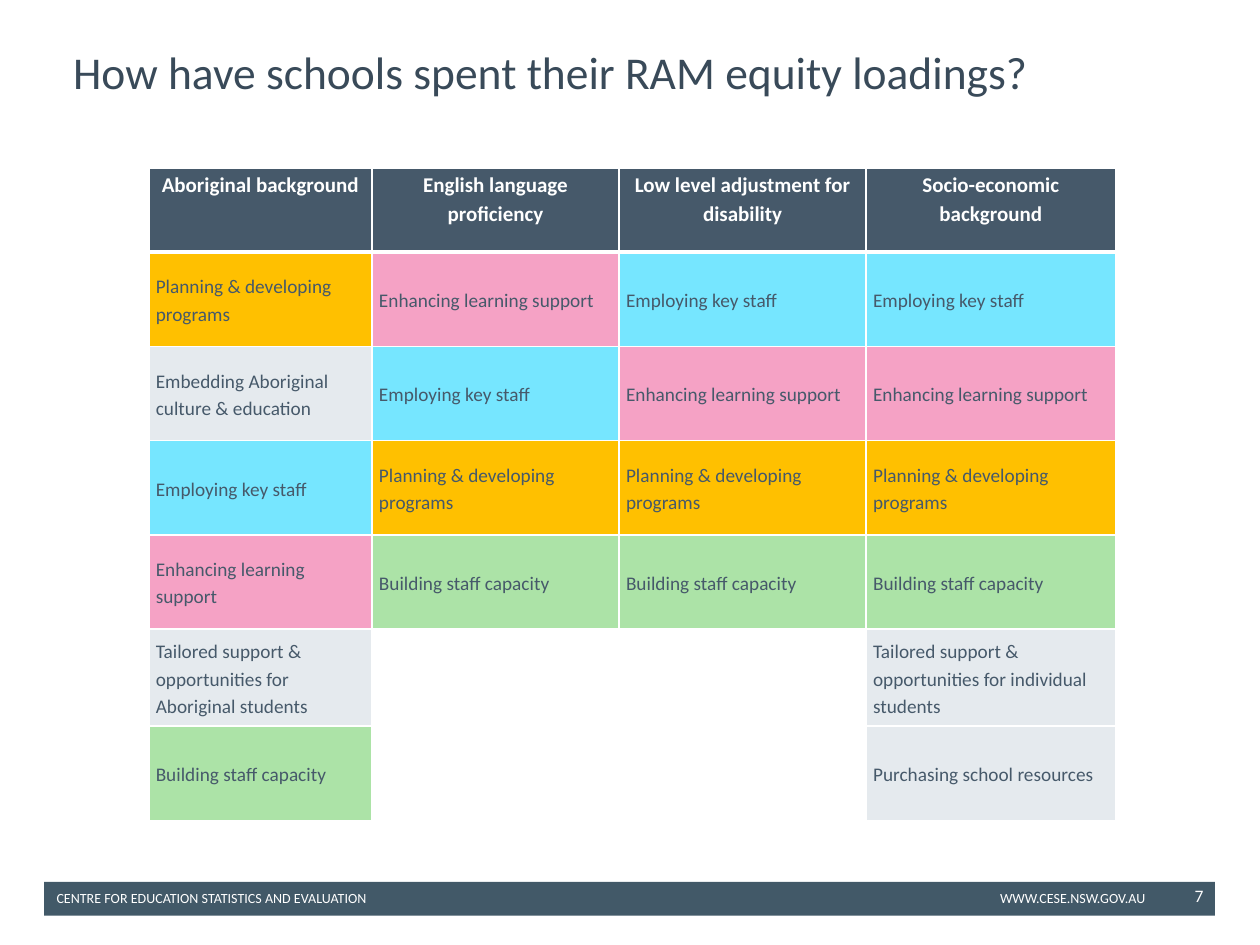
import pptx
import pptx.dml.color
import pptx.enum.shapes
import pptx.enum.text
import pptx.oxml
import pptx.oxml.ns
import pptx.util
from pptx.util import Cm

ALIGN = pptx.enum.text.PP_ALIGN
ANCHOR = pptx.enum.text.MSO_ANCHOR
COLORS = {
    "white": "FFFFFF",
    "title": "394A59",
    "footer": "425968",
    "slate": "46596A",
    "planning": "FFC000",
    "learning": "F5A2C5",
    "staff": "76E6FF",
    "capacity": "ACE3A7",
    "other": "E5EAEE",
}
PLANNING = ("Planning & developing programs", "planning")
LEARNING = ("Enhancing learning support", "learning")
STAFF = ("Employing key staff", "staff")
CAPACITY = ("Building staff capacity", "capacity")
CULTURE = ("Embedding Aboriginal culture & education", "other")
ABORIGINAL = ("Tailored support & opportunities for Aboriginal students", "other")
INDIVIDUAL = ("Tailored support & opportunities for individual students", "other")
RESOURCES = ("Purchasing school resources", "other")

SPENDING = {
    "Aboriginal background": [PLANNING, CULTURE, STAFF, LEARNING, ABORIGINAL, CAPACITY],
    "English language proficiency": [LEARNING, STAFF, PLANNING, CAPACITY],
    "Low level adjustment for disability": [STAFF, LEARNING, PLANNING, CAPACITY],
    "Socio-economic background": [STAFF, LEARNING, PLANNING, CAPACITY, INDIVIDUAL, RESOURCES],
}
COLUMN_WIDTHS = [4.5, 4.98, 4.98, 5.03]
ROW_HEIGHTS = [1.68, 1.9, 1.9, 1.9, 1.9, 1.96, 1.9]


def rgb(name):
    return pptx.dml.color.RGBColor.from_string(COLORS[name])


def write(frame, text, size, color, bold=False, align=ALIGN.LEFT, spacing=None, after=None):
    paragraph = frame.paragraphs[0]
    paragraph.alignment = align
    if spacing:
        paragraph.line_spacing = spacing
    if after is not None:
        paragraph.space_after = pptx.util.Pt(after)
    run = paragraph.add_run()
    run.text = text
    run.font.name = "Calibri"
    run.font.size = pptx.util.Pt(size)
    run.font.bold = bold
    run.font.color.rgb = rgb(color)


def add_title(slide, text):
    title = slide.shapes.title
    title.left, title.top, title.width, title.height = Cm(1.22), Cm(0.43), Cm(24.16), Cm(2)
    title.text_frame.vertical_anchor = ANCHOR.MIDDLE
    write(title.text_frame, text, 26, "title")


def add_footer_bar(slide):
    bar = slide.shapes.add_shape(
        pptx.enum.shapes.MSO_SHAPE.RECTANGLE, Cm(0.89), Cm(17.78), Cm(23.6), Cm(0.68)
    )
    bar.shadow.inherit = False
    bar.fill.solid()
    bar.fill.fore_color.rgb = rgb("footer")
    bar.line.fill.background()


def add_label(slide, text, left, top, width, height, size=8, align=ALIGN.LEFT):
    label = slide.shapes.add_textbox(Cm(left), Cm(top), Cm(width), Cm(height))
    label.text_frame.word_wrap = True
    label.text_frame.vertical_anchor = ANCHOR.MIDDLE
    write(label.text_frame, text, size, "white", align=align)


def set_borders(cell, top, bottom):
    properties = cell._tc.get_or_add_tcPr()
    for side, points in (("L", 1), ("R", 1), ("T", top), ("B", bottom)):
        properties.append(pptx.oxml.parse_xml(
            f'<a:ln{side} {pptx.oxml.ns.nsdecls("a")} w="{points * 12700}"><a:solidFill>'
            f'<a:srgbClr val="{COLORS["white"]}"/></a:solidFill></a:ln{side}>'
        ))


def fill_cell(cell, text, color, is_header):
    cell.margin_left = cell.margin_right = Cm(0.14)
    cell.margin_top = cell.margin_bottom = 0
    cell.fill.solid()
    cell.fill.fore_color.rgb = rgb(color)
    if is_header:
        write(cell.text_frame, text, 12, "white", bold=True, align=ALIGN.CENTER,
              spacing=1.15, after=12)
    else:
        cell.vertical_anchor = ANCHOR.MIDDLE
        write(cell.text_frame, text, 11, "slate", spacing=1.15, after=12)


def add_spending_table(slide):
    table = slide.shapes.add_table(
        len(ROW_HEIGHTS), len(COLUMN_WIDTHS), Cm(3), Cm(3.4),
        Cm(sum(COLUMN_WIDTHS)), Cm(sum(ROW_HEIGHTS)),
    ).table
    for row, height in zip(table.rows, ROW_HEIGHTS):
        row.height = Cm(height)
    for column, width in zip(table.columns, COLUMN_WIDTHS):
        column.width = Cm(width)
    for column_index, (loading, uses) in enumerate(SPENDING.items()):
        entries = [(loading, "slate"), *uses]
        for row_index in range(len(ROW_HEIGHTS)):
            cell = table.cell(row_index, column_index)
            set_borders(cell, 3 if row_index == 1 else 1, 3 if row_index == 0 else 1)
            if row_index < len(entries):
                fill_cell(cell, *entries[row_index], row_index == 0)
            else:
                cell.fill.background()


def main():
    deck = pptx.Presentation()
    deck.slide_width, deck.slide_height = Cm(25.4), Cm(19.05)
    slide = deck.slides.add_slide(deck.slide_layouts[5])
    add_footer_bar(slide)
    add_label(slide, "CENTRE FOR EDUCATION STATISTICS AND EVALUATION", 0.89, 17.81, 8.81, 0.6)
    add_label(slide, "WWW.CESE.NSW.GOV.AU", 19.91, 17.81, 3.73, 0.6)
    add_title(slide, "How have schools spent their RAM equity loadings?")
    add_label(slide, "7", 23.47, 17.55, 1.04, 1.02, size=10, align=ALIGN.RIGHT)
    add_spending_table(slide)
    deck.save("out.pptx")


if __name__ == "__main__":
    main()
